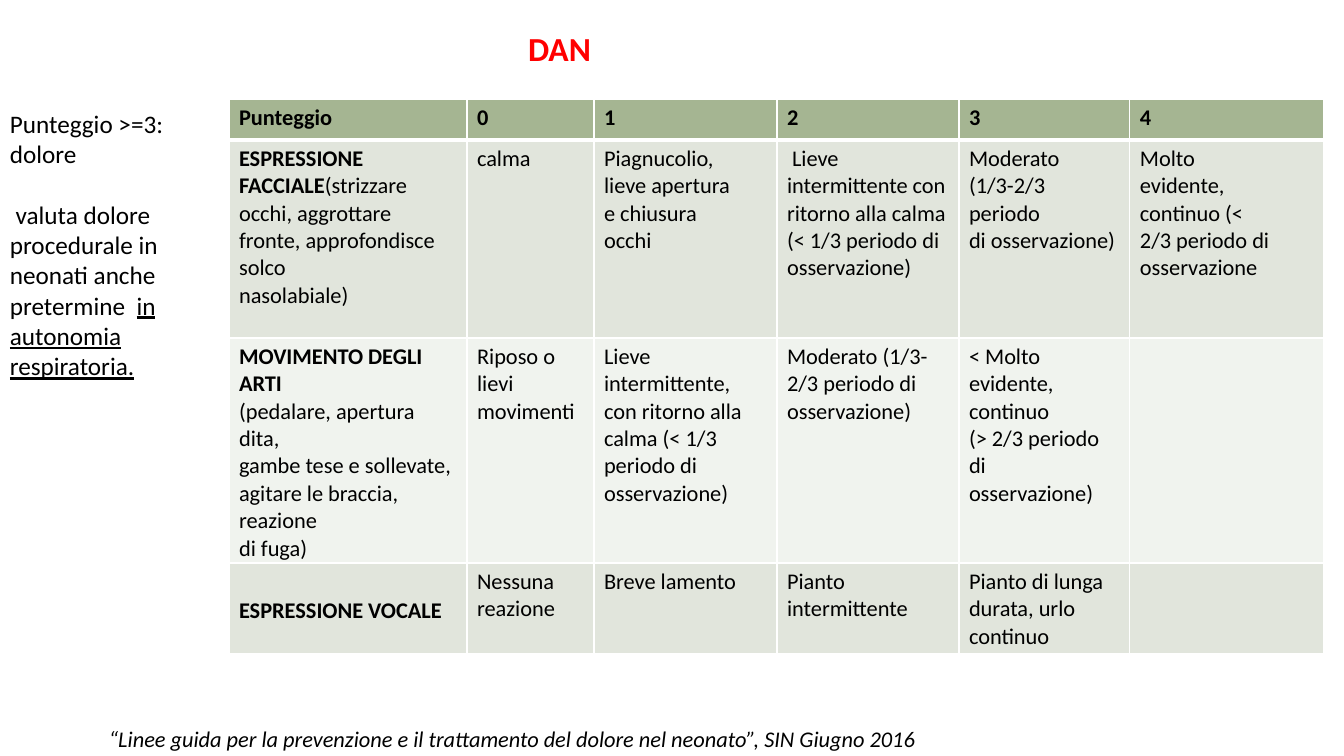
from pptx import Presentation
from pptx.dml.color import RGBColor
from pptx.enum.text import MSO_ANCHOR, MSO_AUTO_SIZE, PP_ALIGN
from pptx.oxml import parse_xml
from pptx.oxml.ns import nsdecls
from pptx.util import Pt

TOP, MIDDLE = MSO_ANCHOR.TOP, MSO_ANCHOR.MIDDLE
LEFT, FIXED = PP_ALIGN.LEFT, MSO_AUTO_SIZE.NONE

FONT = "Calibri"
COLORS = {"head": "A5B592", "dark": "E1E5DC", "light": "F0F3EE",
          "rule": "FFFFFF", "text": "000000", "title": "FF0000"}

TITLE = [[("DAN", "b")]]
SOURCE = [[("“Linee guida per la prevenzione e il trattamento del dolore "
            "nel neonato”, SIN Giugno 2016", "i")]]
NOTE = [
    "Punteggio >=3: dolore",
    [(" valuta dolore procedurale in neonati anche  pretermine  ", ""),
     ("in autonomia respiratoria.", "u")],
]
GRID = [
    [[[(label, "b")]] for label in ("Punteggio", "0", "1", "2", "3", "4")],
    [
        [[("ESPRESSIONE FACCIALE", "b"), ("(strizzare occhi, aggrottare", "")],
         "fronte, approfondisce solco", "nasolabiale)"],
        ["calma"],
        ["Piagnucolio,", "lieve apertura", "e chiusura", "occhi"],
        [" Lieve", "intermittente con", "ritorno alla calma",
         "(< 1/3 periodo di", "osservazione)"],
        ["Moderato", "(1/3-2/3 periodo", "di osservazione)"],
        ["Molto", "evidente,", "continuo (<", "2/3 periodo di", "osservazione"],
    ],
    [
        [[("MOVIMENTO DEGLI ARTI", "b")], "(pedalare, apertura dita,",
         "gambe tese e sollevate,", "agitare le braccia, reazione", "di fuga)"],
        ["Riposo o", "lievi", "movimenti"],
        ["Lieve", "intermittente,", "con ritorno alla", "calma (< 1/3",
         "periodo di", "osservazione)"],
        ["Moderato (1/3-", "2/3 periodo di", "osservazione)"],
        ["< Molto", "evidente,", "continuo", "(> 2/3 periodo di", "osservazione)"],
        [],
    ],
    [
        [[("ESPRESSIONE VOCALE", "b")]],
        ["Nessuna", "reazione"],
        ["Breve lamento"],
        ["Pianto", "intermittente"],
        ["Pianto di lunga", "durata, urlo", "continuo"],
        [],
    ],
]
FILLS = ["head", "dark", "light", "dark"]
WIDTHS = [238, 127, 183, 182, 171, 194]
HEIGHTS = [41, 198, 225, 91]


def px(count):
    return round(count * 914400 / 100.8)


def write(frame, lines, size, color="text"):
    for index, line in enumerate(lines):
        para = frame.paragraphs[0] if index == 0 else frame.add_paragraph()
        parts = [(line, "")] if isinstance(line, str) else line
        for words, style in parts:
            run = para.add_run()
            run.text = words
            font = run.font
            font.name, font.size = FONT, Pt(size)
            font.color.rgb = RGBColor.from_string(COLORS[color])
            font.bold = "b" in style
            font.italic = "i" in style
            font.underline = "u" in style


def place(shape, left, top, width, height):
    shape.left, shape.top = px(left), px(top)
    shape.width, shape.height = px(width), px(height)


def add_text(slide, box, lines, size):
    shape = slide.shapes.add_textbox(*map(px, box))
    shape.text_frame.word_wrap = True
    write(shape.text_frame, lines, size)
    return shape.text_frame


def add_rules(cell, base):
    props = cell._tc.get_or_add_tcPr()
    for side, points in (("L", 1), ("R", 1), ("T", 1), ("B", base)):
        props.append(parse_xml(
            f'<a:ln{side} {nsdecls("a")} w="{Pt(points)}"><a:solidFill>'
            f'<a:srgbClr val="{COLORS["rule"]}"/></a:solidFill></a:ln{side}>'))


def add_grid(slide):
    shape = slide.shapes.add_table(
        len(GRID), len(WIDTHS), px(229), px(99), px(sum(WIDTHS)), px(sum(HEIGHTS)))
    table = shape.table
    for column, width in zip(table.columns, WIDTHS):
        column.width = px(width)
    for row, height in zip(table.rows, HEIGHTS):
        row.height = px(height)
    for r, row in enumerate(GRID):
        for c, lines in enumerate(row):
            cell = table.cell(r, c)
            cell.margin_bottom = 0
            add_rules(cell, 3 if r == 0 else 1)
            cell.fill.solid()
            cell.fill.fore_color.rgb = RGBColor.from_string(COLORS[FILLS[r]])
            write(cell.text_frame, lines, 16)
    table.cell(len(GRID) - 1, 0).vertical_anchor = MIDDLE


def main():
    deck = Presentation()
    deck.slide_width, deck.slide_height = px(1344), px(756)
    slide = deck.slides.add_slide(deck.slide_layouts[5])
    add_grid(slide)
    title = slide.shapes.title
    place(title, 518, 23, 614, 50)
    frame = title.text_frame
    frame.auto_size, frame.vertical_anchor = FIXED, TOP
    write(frame, TITLE, 24, "title")
    frame.paragraphs[0].alignment = LEFT
    add_text(slide, (99, 720, 1111, 37), SOURCE, 16)
    note = add_text(slide, (0, 103, 184, 285), NOTE, 18)
    note.paragraphs[1].space_before = Pt(22)
    deck.save("out.pptx")


if __name__ == "__main__":
    main()
